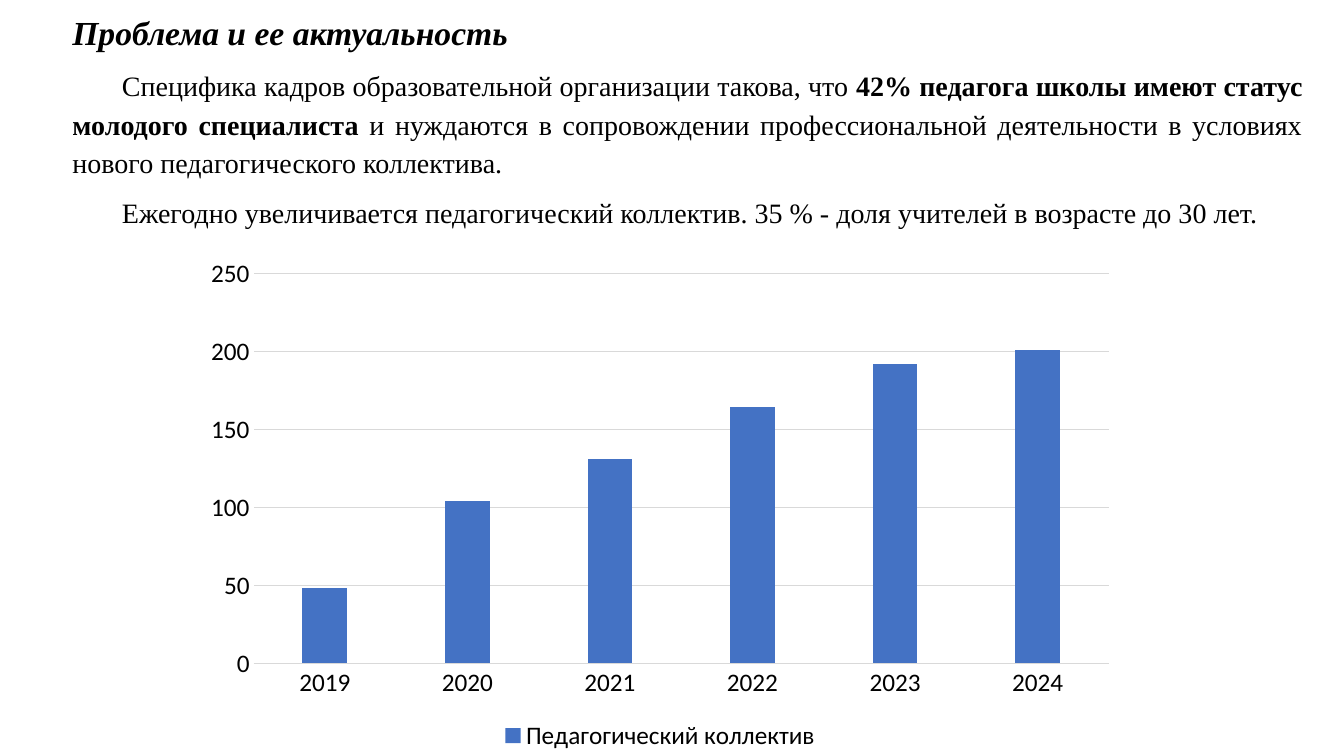
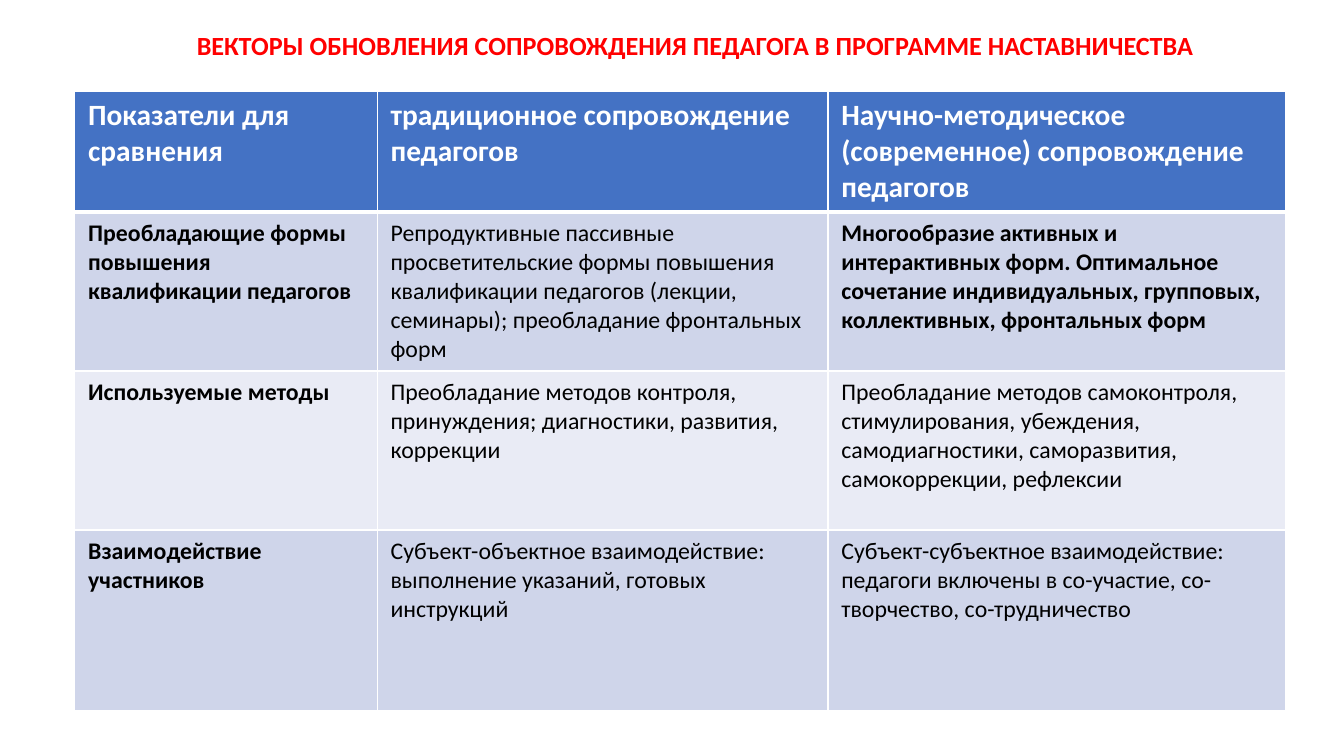
from lxml.etree import SubElement as Sub
from pptx import Presentation
from pptx.chart.data import CategoryChartData as Data
from pptx.dml.color import RGBColor
from pptx.enum.chart import XL_CHART_TYPE as Kind, XL_LEGEND_POSITION as Spot
from pptx.enum.chart import XL_TICK_MARK as Tick
from pptx.enum.text import PP_ALIGN as Align
from pptx.oxml.ns import qn
from pptx.util import Pt

BLACK, WHITE, RED = "000000", "FFFFFF", "FF0000"
BLUE, GRAY = "4472C4", "D9D9D9"
BANDS = ["CFD5EA", "E9EBF5"]
SANS, SERIF = "Calibri", "Times New Roman"


def color(code):
    return RGBColor.from_string(code)


def style(font, size, code=BLACK, face=SANS, bold=False, italic=False):
    font.name, font.size = face, Pt(size)
    font.bold, font.italic = bold, italic
    font.color.rgb = color(code)


def border(cell, side, width):
    line = Sub(cell._tc.get_or_add_tcPr(), qn("a:ln" + side), w=str(Pt(width)))
    fill = Sub(line, qn("a:solidFill"))
    Sub(fill, qn("a:srgbClr"), val=WHITE)


class Deck:
    def __init__(self):
        self.prs = Presentation()
        self.prs.slide_width, self.prs.slide_height = Pt(960), Pt(540)

    def page(self):
        self.slide = self.prs.slides.add_slide(self.prs.slide_layouts[6])

    def text(self, box, paras, align, space=1, after=0):
        """Each paragraph is (first-line indent, style, [(text, bold), ...])."""
        frame = self.slide.shapes.add_textbox(*map(Pt, box)).text_frame
        frame.word_wrap = True
        for i, (indent, look, runs) in enumerate(paras):
            para = frame.add_paragraph() if i else frame.paragraphs[0]
            para.alignment, para.line_spacing = align, space
            para.space_after = Pt(after)
            if indent:
                para._p.get_or_add_pPr().set("indent", str(Pt(indent)))
            for words, bold in runs:
                run = para.add_run()
                run.text = words
                style(run.font, bold=bold, **look)

    def columns(self, box, cats, name, vals):
        data = Data()
        data.categories = cats
        data.add_series(name, vals)
        chart = self.slide.shapes.add_chart(
            Kind.COLUMN_CLUSTERED, *map(Pt, box), data).chart
        style(chart.font, 10)
        chart.has_title = False
        # Bars
        plot = chart.plots[0]
        plot.gap_width, plot.overlap = 219, -27
        plot.vary_by_categories = False
        fill = plot.series[0].format.fill
        fill.solid()
        fill.fore_color.rgb = color(BLUE)
        # Axes and grid
        cat, val = chart.category_axis, chart.value_axis
        for axis in (cat, val):
            axis.major_tick_mark = axis.minor_tick_mark = Tick.NONE
            style(axis.tick_labels.font, 18)
        val.minimum_scale, val.maximum_scale, val.major_unit = 0, 250, 50
        val.format.line.fill.background()
        for line in (cat.format.line, val.major_gridlines.format.line):
            line.color.rgb = color(GRAY)
            line.width = Pt(0.75)
        # Legend
        chart.has_legend = True
        chart.legend.position = Spot.BOTTOM
        chart.legend.include_in_layout = False
        style(chart.legend.font, 18)

    def table(self, left, top, widths, heights, rows, strong):
        grid = self.slide.shapes.add_table(
            len(rows), len(widths), Pt(left), Pt(top),
            Pt(sum(widths)), Pt(sum(heights))).table
        for col, width in zip(grid.columns, widths):
            col.width = Pt(width)
        for r, (row, height) in enumerate(zip(rows, heights)):
            grid.rows[r].height = Pt(height)
            for c, words in enumerate(row):
                cell = grid.cell(r, c)
                cell.margin_left = cell.margin_right = Pt(9.5)
                cell.margin_top = cell.margin_bottom = Pt(4.75)
                for side in "LRTB":
                    thick = (r, side) in ((0, "B"), (1, "T"))
                    border(cell, side, 3 if thick else 1)
                cell.fill.solid()
                cell.fill.fore_color.rgb = color(BANDS[(r - 1) % 2] if r else BLUE)
                cell.text_frame.text = words
                style(cell.text_frame.paragraphs[0].runs[0].font,
                      17 if r else 21, BLACK if r else WHITE,
                      bold=r == 0 or c == 0 or (r, c) in strong)


def main():
    deck = Deck()

    # Problem and staff growth
    deck.page()
    deck.columns((137.5, 177, 668, 363),
                 ["2019", "2020", "2021", "2022", "2023", "2024"],
                 "Педагогический коллектив", [48, 104, 131, 164, 192, 201])
    head = dict(size=24, face=SERIF, italic=True)
    body = dict(size=20, face=SERIF)
    deck.text((44.6, 0.7, 893, 168.5), [
        (0, head, [("Проблема и ее актуальность", True)]),
        (35.4, body, [
            ("Специфика кадров образовательной организации такова, что ", False),
            ("42% педагога школы имеют статус молодого специалиста ", True),
            ("и нуждаются в сопровождении профессиональной деятельности "
             "в условиях нового педагогического коллектива.", False)]),
        (35.4, body, [
            ("Ежегодно увеличивается педагогический коллектив. "
             "35 % - доля учителей в возрасте до 30 лет.", False)]),
    ], Align.JUSTIFY, 1.15, 8)

    # Comparison of approaches
    deck.page()
    deck.text((46, 17.3, 901, 30), [
        (0, dict(size=18.7, code=RED), [
            ("ВЕКТОРЫ ОБНОВЛЕНИЯ СОПРОВОЖДЕНИЯ ПЕДАГОГА "
             "В ПРОГРАММЕ НАСТАВНИЧЕСТВА", True)]),
    ], Align.CENTER)
    deck.table(53.5, 65, [216, 322, 327], [86.4, 113.6, 113.6, 129], [
        ["Показатели для сравнения",
         "традиционное сопровождение педагогов",
         "Научно-методическое (современное) сопровождение педагогов"],
        ["Преобладающие формы повышения квалификации педагогов",
         "Репродуктивные пассивные просветительские формы повышения "
         "квалификации педагогов (лекции, семинары); преобладание "
         "фронтальных форм",
         "Многообразие активных и интерактивных форм. Оптимальное сочетание "
         "индивидуальных, групповых, коллективных, фронтальных форм"],
        ["Используемые методы",
         "Преобладание методов контроля, принуждения; диагностики, "
         "развития, коррекции",
         "Преобладание методов самоконтроля, стимулирования, убеждения, "
         "самодиагностики, саморазвития, самокоррекции, рефлексии"],
        ["Взаимодействие участников",
         "Субъект-объектное взаимодействие: выполнение указаний, "
         "готовых инструкций",
         "Субъект-субъектное взаимодействие: педагоги включены в "
         "со-участие, со-творчество, со-трудничество"],
    ], strong={(1, 2)})

    deck.prs.save("out.pptx")


if __name__ == "__main__":
    main()
